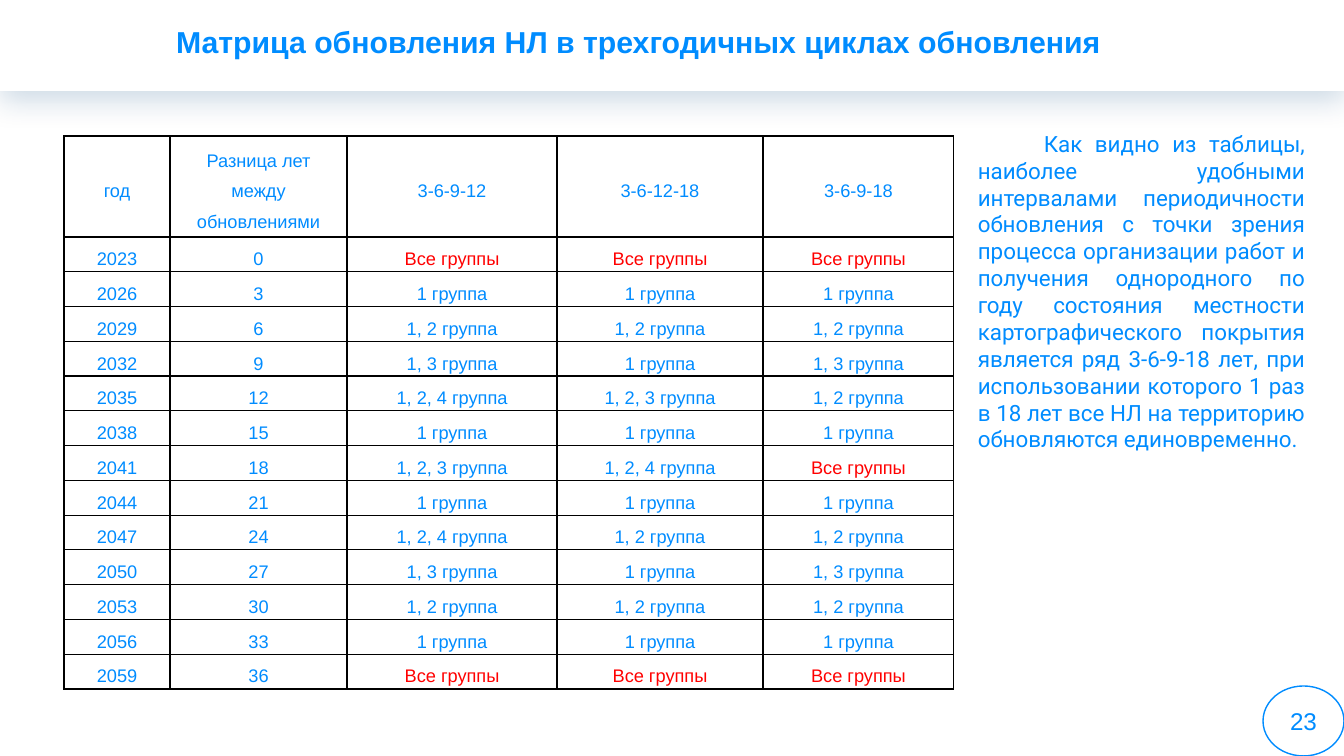
from lxml import etree
from pptx import Presentation
from pptx.dml.color import RGBColor
from pptx.enum.shapes import MSO_SHAPE
from pptx.enum.text import MSO_ANCHOR, PP_ALIGN
from pptx.oxml import parse_xml
from pptx.util import Pt

SCALE = 12192000 / 1344  # EMU per px
BLUE, RED, WHITE, BLACK = "008CFF", "FF0000", "FFFFFF", "000000"
NAMESPACE = "http://schemas.openxmlformats.org/drawingml/2006/main"

COLUMN_WIDTHS = [106, 177, 210, 206, 191]
HEADER_HEIGHT = 101
HEADER = ["год", "Разница лет между обновлениями", "3-6-9-12", "3-6-12-18", "3-6-9-18"]
FIRST_YEAR, CYCLE = 2023, 3
ALL = "Все группы"
# Groups updated in each cycle, one entry per interval series
UPDATES = [
    (ALL, ALL, ALL),
    ("1", "1", "1"),
    ("1, 2", "1, 2", "1, 2"),
    ("1, 3", "1", "1, 3"),
    ("1, 2, 4", "1, 2, 3", "1, 2"),
    ("1", "1", "1"),
    ("1, 2, 3", "1, 2, 4", ALL),
    ("1", "1", "1"),
    ("1, 2, 4", "1, 2", "1, 2"),
    ("1, 3", "1", "1, 3"),
    ("1, 2", "1, 2", "1, 2"),
    ("1", "1", "1"),
    (ALL, ALL, ALL),
]
CONCLUSION = (
    "Как видно из таблицы, наиболее удобными интервалами периодичности "
    "обновления с точки зрения процесса организации работ и получения "
    "однородного по году состояния местности картографического покрытия "
    "является ряд 3-6-9-18 лет, при использовании которого 1 раз в 18 лет "
    "все НЛ на территорию обновляются единовременно."
)


def px(length):
    return round(length * SCALE)


def color(value):
    return RGBColor.from_string(value)


def write(frame, text, size, font="Arial", ink=BLUE, align=PP_ALIGN.CENTER):
    frame.word_wrap = True
    paragraph = frame.paragraphs[0]
    paragraph.text = text
    paragraph.alignment = align
    paragraph.font.name = font
    paragraph.font.size = Pt(size)
    paragraph.font.color.rgb = color(ink)
    return paragraph


def add_header(slide, left, top, width, height):
    # White band with a soft shadow below
    band = slide.shapes.add_shape(
        MSO_SHAPE.RECTANGLE, px(left), px(top), px(width), px(height))
    band.fill.solid()
    band.fill.fore_color.rgb = color(WHITE)
    band.line.fill.background()
    band.shadow.inherit = False
    effects = band.element.spPr.find(f"{{{NAMESPACE}}}effectLst")
    effects.append(parse_xml(
        f'<a:outerShdw xmlns:a="{NAMESPACE}" blurRad="{Pt(21)}" dist="{Pt(6)}" '
        'dir="5400000" algn="t" rotWithShape="0">'
        '<a:srgbClr val="00457F"><a:alpha val="20000"/></a:srgbClr></a:outerShdw>'))

    # Title
    title = slide.shapes.add_textbox(px(left + 29), px(top + 19), px(1219), px(50))
    frame = title.text_frame
    frame.margin_left = frame.margin_right = frame.margin_top = frame.margin_bottom = 0
    frame.vertical_anchor = MSO_ANCHOR.MIDDLE
    paragraph = write(frame, "Матрица обновления НЛ в трехгодичных циклах обновления", 21.6)
    paragraph.font.bold = True
    paragraph.line_spacing = 0.9


def add_borders(cell):
    properties = cell._tc.get_or_add_tcPr()
    for index, side in enumerate(("lnL", "lnR", "lnT", "lnB")):
        border = etree.Element(f"{{{NAMESPACE}}}{side}", w=str(Pt(1)))
        fill = etree.SubElement(border, f"{{{NAMESPACE}}}solidFill")
        etree.SubElement(fill, f"{{{NAMESPACE}}}srgbClr", val=BLACK)
        properties.insert(index, border)


def add_matrix(slide, left, top, width, height):
    rows = [HEADER]
    for index, groups in enumerate(UPDATES):
        labels = [group if group == ALL else f"{group} группа" for group in groups]
        rows.append([str(FIRST_YEAR + index * CYCLE), str(index * CYCLE), *labels])

    table = slide.shapes.add_table(
        len(rows), len(HEADER), px(left), px(top), px(width), px(height)).table
    table.first_row = table.horz_banding = False
    for column, column_width in zip(table.columns, COLUMN_WIDTHS):
        column.width = px(column_width)
    for index, row in enumerate(table.rows):
        row.height = px((height - HEADER_HEIGHT) / len(UPDATES) if index else HEADER_HEIGHT)
        for cell, text in zip(row.cells, rows[index]):
            cell.fill.background()
            cell.vertical_anchor = MSO_ANCHOR.MIDDLE
            cell.margin_left = cell.margin_right = px(8)
            cell.margin_top = cell.margin_bottom = 0
            paragraph = write(cell.text_frame, text, 13, ink=RED if text == ALL else BLUE)
            paragraph.line_spacing = 1.5
            add_borders(cell)


def add_conclusion(slide, left, top, width, height):
    box = slide.shapes.add_textbox(px(left), px(top), px(width), px(height))
    paragraph = write(box.text_frame, CONCLUSION, 16, "Roboto", align=PP_ALIGN.JUSTIFY)
    paragraph._p.get_or_add_pPr().set("indent", str(px(66)))


def add_page_number(slide, left, top, width, height):
    badge = slide.shapes.add_shape(
        MSO_SHAPE.OVAL, px(left), px(top), px(width), px(height))
    badge.shadow.inherit = False
    badge.fill.solid()
    badge.fill.fore_color.rgb = color(WHITE)
    badge.line.color.rgb = color(BLUE)
    badge.line.width = Pt(1)
    badge.text_frame.vertical_anchor = MSO_ANCHOR.MIDDLE
    write(badge.text_frame, "23", 17.3)


def main():
    presentation = Presentation()
    presentation.slide_width, presentation.slide_height = px(1344), px(756)
    slide = presentation.slides.add_slide(presentation.slide_layouts[6])
    add_header(slide, 0, 0, 1344, 91)
    add_matrix(slide, 64, 136, sum(COLUMN_WIDTHS), 553)
    add_conclusion(slide, 968, 125, 347, 336)
    add_page_number(slide, 1263, 686, 81, 70)
    presentation.save("out.pptx")


if __name__ == "__main__":
    main()
